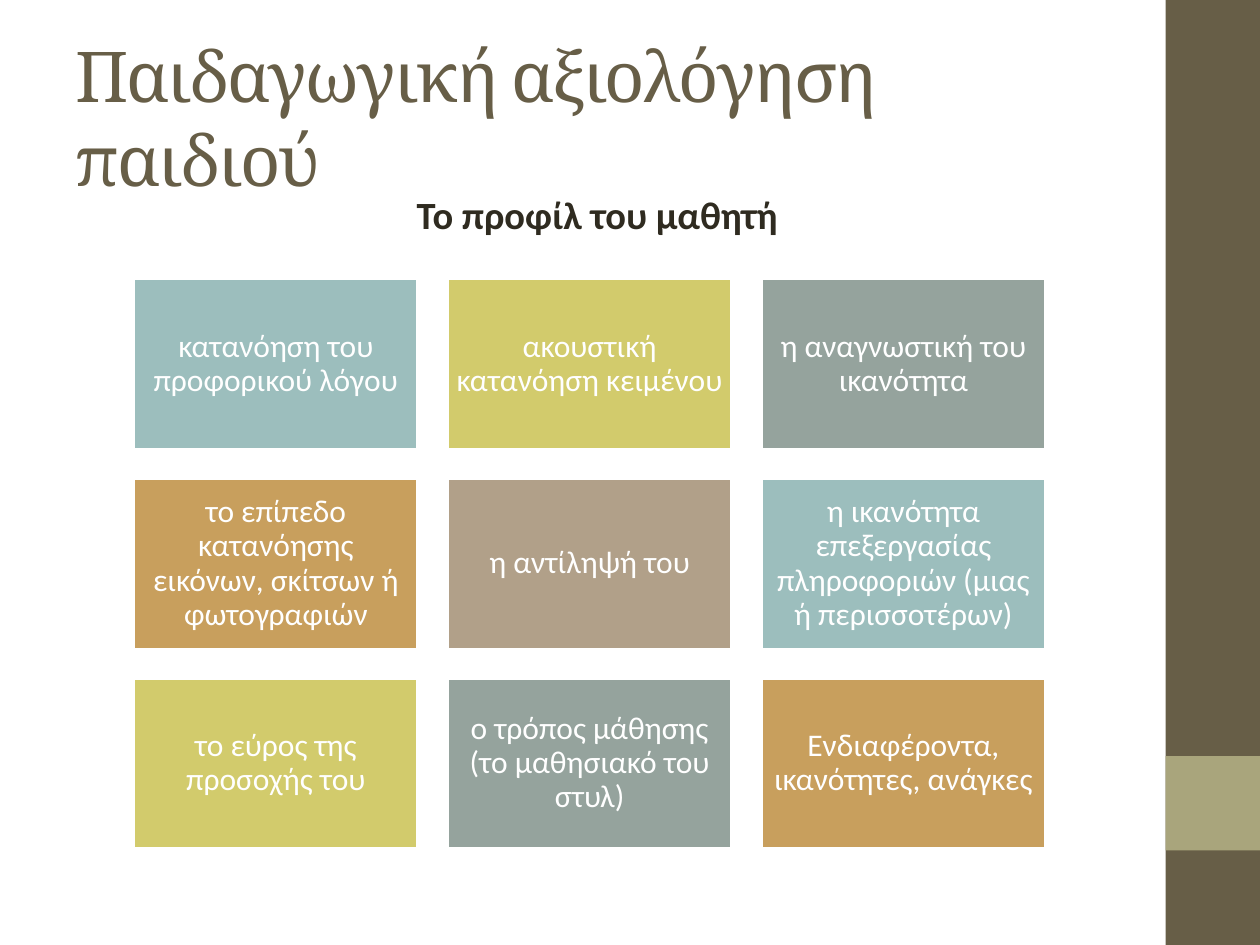
from pptx import Presentation
from pptx.dml.color import RGBColor
from pptx.enum.shapes import MSO_SHAPE as Shape
from pptx.enum.text import MSO_ANCHOR as Anchor, PP_ALIGN as Align
from pptx.util import Inches, Pt

COLORS = {
    "brown": "675E47", "sage": "A9A57C", "ink": "2F2B20", "white": "FFFFFF",
    "teal": "9CBEBD", "lime": "D2CB6C", "gray": "95A39D",
    "ochre": "C89F5D", "taupe": "B1A089",
}
CARD_COLORS = ["teal", "lime", "gray", "ochre", "taupe"]
CARD_TEXTS = [
    "κατανόηση του προφορικού λόγου",
    "ακουστική κατανόηση κειμένου",
    "η αναγνωστική του ικανότητα",
    "το επίπεδο κατανόησης εικόνων, σκίτσων ή φωτογραφιών",
    "η αντίληψή του",
    "η ικανότητα επεξεργασίας πληροφοριών (μιας ή περισσοτέρων)",
    "το εύρος της προσοχής του",
    "ο τρόπος μάθησης (το μαθησιακό του στυλ)",
    "Ενδιαφέροντα, ικανότητες, ανάγκες",
]
COLUMNS = 3
CARD_LEFT, CARD_TOP = 1.06, 2.21
CARD_WIDTH, CARD_HEIGHT = 2.26, 1.36
COLUMN_STEP, ROW_STEP = 2.49, 1.585


def color(name):
    return RGBColor.from_string(COLORS[name])


def add_box(slide, left, top, width, height, fill):
    shape = slide.shapes.add_shape(
        Shape.RECTANGLE, Inches(left), Inches(top), Inches(width), Inches(height))
    shape.shadow.inherit = False
    shape.fill.solid()
    shape.fill.fore_color.rgb = color(fill)
    shape.line.fill.background()
    return shape


def add_text_box(slide, left, top, width, height, anchor):
    box = slide.shapes.add_textbox(
        Inches(left), Inches(top), Inches(width), Inches(height))
    box.text_frame.word_wrap = True
    box.text_frame.vertical_anchor = anchor
    return box.text_frame


def add_run(paragraph, text, size, font, font_color, bold=False):
    run = paragraph.add_run()
    run.text = text
    run.font.size = Pt(size)
    run.font.name = font
    run.font.bold = bold
    run.font.color.rgb = color(font_color)
    return run


def add_title(slide, text):
    frame = add_text_box(slide, 0.5, 0.3, 8.33, 1.25, Anchor.MIDDLE)
    run = add_run(frame.paragraphs[0], text, 40, "Cambria", "brown")
    run.font._element.set("spc", "-100")


def add_subtitle(slide, text):
    frame = add_text_box(slide, 0.51, 1.47, 8.33, 0.5, Anchor.TOP)
    paragraph = frame.paragraphs[0]
    paragraph.alignment = Align.CENTER
    properties = paragraph._p.get_or_add_pPr()
    properties.set("marL", str(Inches(0.38)))
    properties.set("indent", str(Inches(-0.25)))
    add_run(paragraph, text, 22, "Calibri", "ink", bold=True)


def add_card(slide, index, text):
    row, column = divmod(index, COLUMNS)
    card = add_box(
        slide, CARD_LEFT + column * COLUMN_STEP, CARD_TOP + row * ROW_STEP,
        CARD_WIDTH, CARD_HEIGHT, CARD_COLORS[index % len(CARD_COLORS)])
    card.line.color.rgb = color("white")
    card.line.width = Pt(2)
    frame = card.text_frame
    frame.word_wrap = True
    frame.vertical_anchor = Anchor.MIDDLE
    frame.margin_left = frame.margin_right = Inches(0.07)
    frame.margin_top = frame.margin_bottom = Inches(0.07)
    paragraph = frame.paragraphs[0]
    paragraph.alignment = Align.CENTER
    paragraph.line_spacing = 0.9
    add_run(paragraph, text, 18, "Calibri", "white")


def main():
    presentation = Presentation()
    presentation.slide_width = Inches(10)
    presentation.slide_height = Inches(7.5)
    slide = presentation.slides.add_slide(presentation.slide_layouts[6])
    add_box(slide, 9.25, 0, 0.75, 7.5, "brown")
    add_box(slide, 9.25, 6, 0.75, 0.75, "sage")
    add_title(slide, "Παιδαγωγική αξιολόγηση παιδιού")
    add_subtitle(slide, "Το προφίλ του μαθητή")
    for index, text in enumerate(CARD_TEXTS):
        add_card(slide, index, text)
    presentation.save("out.pptx")


if __name__ == "__main__":
    main()
